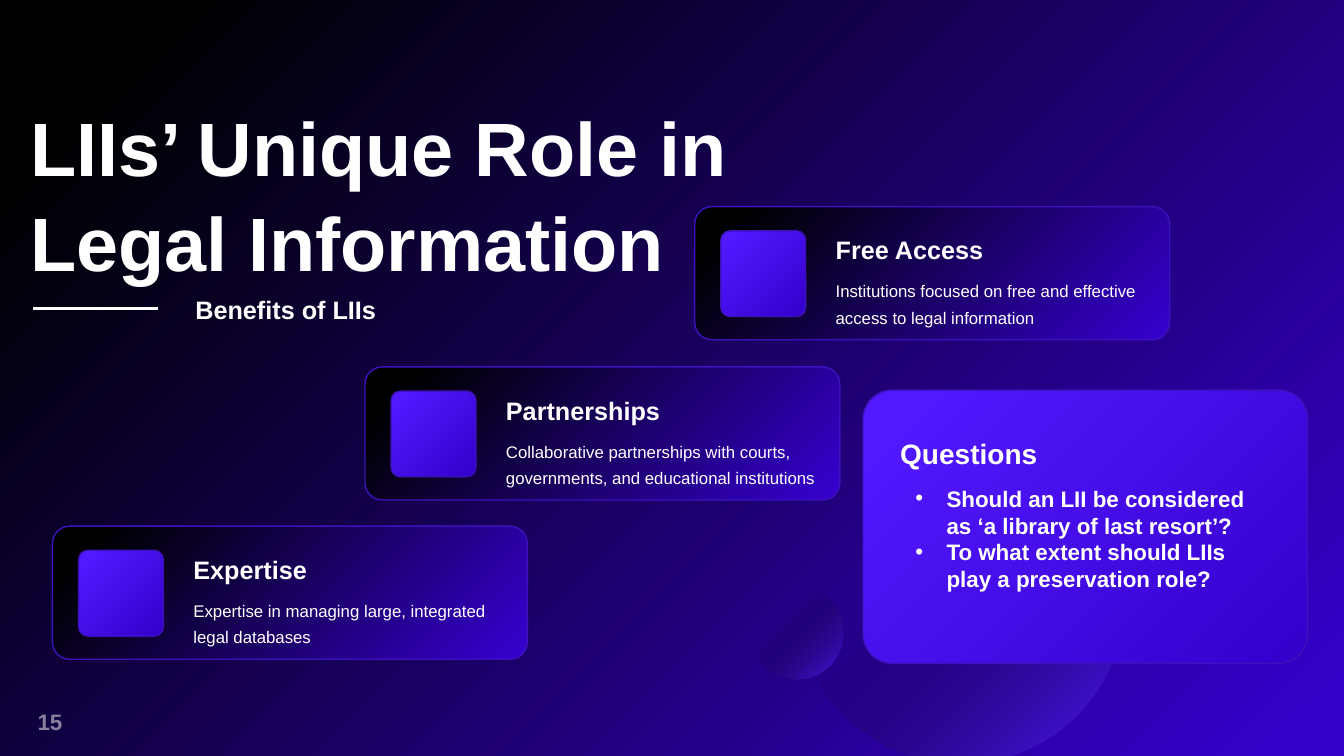
import pptx
import pptx.dml.color
import pptx.enum.shapes
import pptx.enum.text
import pptx.oxml.ns
import pptx.util
from lxml import etree

Inches = pptx.util.Inches
Pt = pptx.util.Pt
RGBColor = pptx.dml.color.RGBColor
Shapes = pptx.enum.shapes.MSO_SHAPE
Align = pptx.enum.text.PP_ALIGN
Anchor = pptx.enum.text.MSO_ANCHOR
qn = pptx.oxml.ns.qn

WHITE = RGBColor(0xFF, 0xFF, 0xFF)
BLACK = RGBColor(0, 0, 0)
INDIGO = RGBColor(0x35, 0x00, 0xCC)
VIOLET = RGBColor(0x52, 0x18, 0xFF)
NIGHT = RGBColor(0x0B, 0x09, 0x1E)
EDGE = RGBColor(0x3D, 0x12, 0xBD)

DARK = [(2, INDIGO, 100), (91, BLACK, 100), (100, BLACK, 100)]
BRIGHT = [(2, INDIGO, 100), (91, VIOLET, 100), (100, VIOLET, 100)]
GLOW = [(0, VIOLET, 100), (63, NIGHT, 0)]

CARDS = [
    (0.52, 5.22, "Expertise", "Expertise in managing large, integrated legal databases"),
    (3.62, 3.64, "Partnerships",
     "Collaborative partnerships with courts, governments, and educational institutions"),
    (6.89, 2.05, "Free Access",
     "Institutions focused on free and effective access to legal information"),
]
QUESTIONS = [
    "Should an LII be considered as ‘a library of last resort’?",
    "To what extent should LIIs play a preservation role?",
]


class SlideBuilder:
    """Holds the slide's style and draws its elements."""

    font = "Arial"
    color = WHITE

    def __init__(self, page):
        self.page = page

    def gradient(self, fill, element, stops):
        fill.gradient()
        grad = element.xpath(".//a:gradFill")[0]
        for child in list(grad):
            grad.remove(child)
        grad.set("rotWithShape", "1")
        stop_list = etree.SubElement(grad, qn("a:gsLst"))
        for position, color, opacity in stops:
            stop = etree.SubElement(stop_list, qn("a:gs"), pos=str(position * 1000))
            tint = etree.SubElement(stop, qn("a:srgbClr"), val=str(color))
            if opacity < 100:
                etree.SubElement(tint, qn("a:alpha"), val=str(opacity * 1000))
        focus = etree.SubElement(grad, qn("a:path"), path="circle")
        etree.SubElement(focus, qn("a:fillToRect"), l="100000", t="100000")

    def background(self, stops):
        self.gradient(self.page.background.fill, self.page.element, stops)

    def shape(self, kind, left, top, width, height, stops):
        shape = self.page.shapes.add_shape(
            kind, Inches(left), Inches(top), Inches(width), Inches(height))
        shape.shadow.inherit = False
        self.gradient(shape.fill, shape.element, stops)
        return shape

    def circle(self, left, top, size):
        circle = self.shape(Shapes.OVAL, left, top, size, size, GLOW)
        circle.rotation = 180
        circle.line.fill.background()

    def panel(self, left, top, width, height, rounding, stops):
        panel = self.shape(Shapes.ROUNDED_RECTANGLE, left, top, width, height, stops)
        panel.adjustments[0] = rounding
        panel.line.color.rgb = EDGE
        panel.line.width = Pt(1)

    def text(self, left, top, width, height, lines, size, bold=True, spacing=None,
             bullet=False, align=None, anchor=Anchor.TOP, opacity=100):
        box = self.page.shapes.add_textbox(
            Inches(left), Inches(top), Inches(width), Inches(height))
        frame = box.text_frame
        frame.word_wrap = True
        frame.vertical_anchor = anchor
        for index, line in enumerate(lines):
            para = frame.add_paragraph() if index else frame.paragraphs[0]
            para.alignment = align
            if spacing:
                para.line_spacing = spacing
            if bullet:
                self.bullet(para)
            span = para.add_run()
            span.text = line
            span.font.name = self.font
            span.font.size = Pt(size)
            span.font.bold = bold
            span.font.color.rgb = self.color
            if opacity < 100:
                tint = span.font.fill._xPr.xpath(".//a:srgbClr")[0]
                etree.SubElement(tint, qn("a:alpha"), val=str(opacity * 1000))

    def bullet(self, para):
        properties = para._p.get_or_add_pPr()
        properties.set("marL", str(Inches(0.31)))
        properties.set("indent", str(-Inches(0.31)))
        etree.SubElement(properties, qn("a:buFont"), typeface=self.font)
        etree.SubElement(properties, qn("a:buChar"), char="•")

    def rule(self, left, right, top):
        rule = self.page.shapes.add_connector(
            pptx.enum.shapes.MSO_CONNECTOR.STRAIGHT,
            Inches(left), Inches(top), Inches(right), Inches(top))
        rule.line.color.rgb = self.color
        rule.line.width = Pt(2)
        etree.SubElement(rule.element.spPr, qn("a:effectLst"))

    def card(self, left, top, heading, body):
        self.panel(left, top, 4.71, 1.32, 0.129, DARK)
        self.text(left + 1.3, top + 0.23, 3.3, 0.4, [heading], 18)
        self.text(left + 1.3, top + 0.63, 3.3, 0.6, [body], 12, bold=False, spacing=1.3)
        self.panel(left + 0.26, top + 0.24, 0.84, 0.85, 0.107, BRIGHT)


def main():
    deck = pptx.Presentation()
    deck.slide_width = Inches(13.33)
    deck.slide_height = Inches(7.5)
    builder = SlideBuilder(deck.slides.add_slide(deck.slide_layouts[6]))
    builder.background(DARK)
    builder.text(0.19, 6.97, 0.61, 0.37, ["15"], 16, align=Align.CENTER,
                 anchor=Anchor.MIDDLE, opacity=50)
    builder.circle(7.44, 5.82, 0.92)
    builder.circle(7.9, 4.32, 3.25)
    builder.text(0.2, 0.92, 7.19, 1.87, ["LIIs’ Unique Role in Legal Information"], 54,
                 spacing=1.04)
    builder.text(1.84, 2.87, 4.33, 0.4, ["Benefits of LIIs"], 18)
    builder.rule(0.33, 1.57, 3.06)
    for card in CARDS:
        builder.card(*card)
    builder.panel(8.56, 3.87, 4.41, 2.71, 0.107, BRIGHT)
    builder.text(8.83, 4.28, 3.75, 0.44, ["Questions"], 20)
    builder.text(8.98, 4.76, 3.75, 1.45, QUESTIONS, 16, bullet=True)
    deck.save("out.pptx")


if __name__ == "__main__":
    main()
